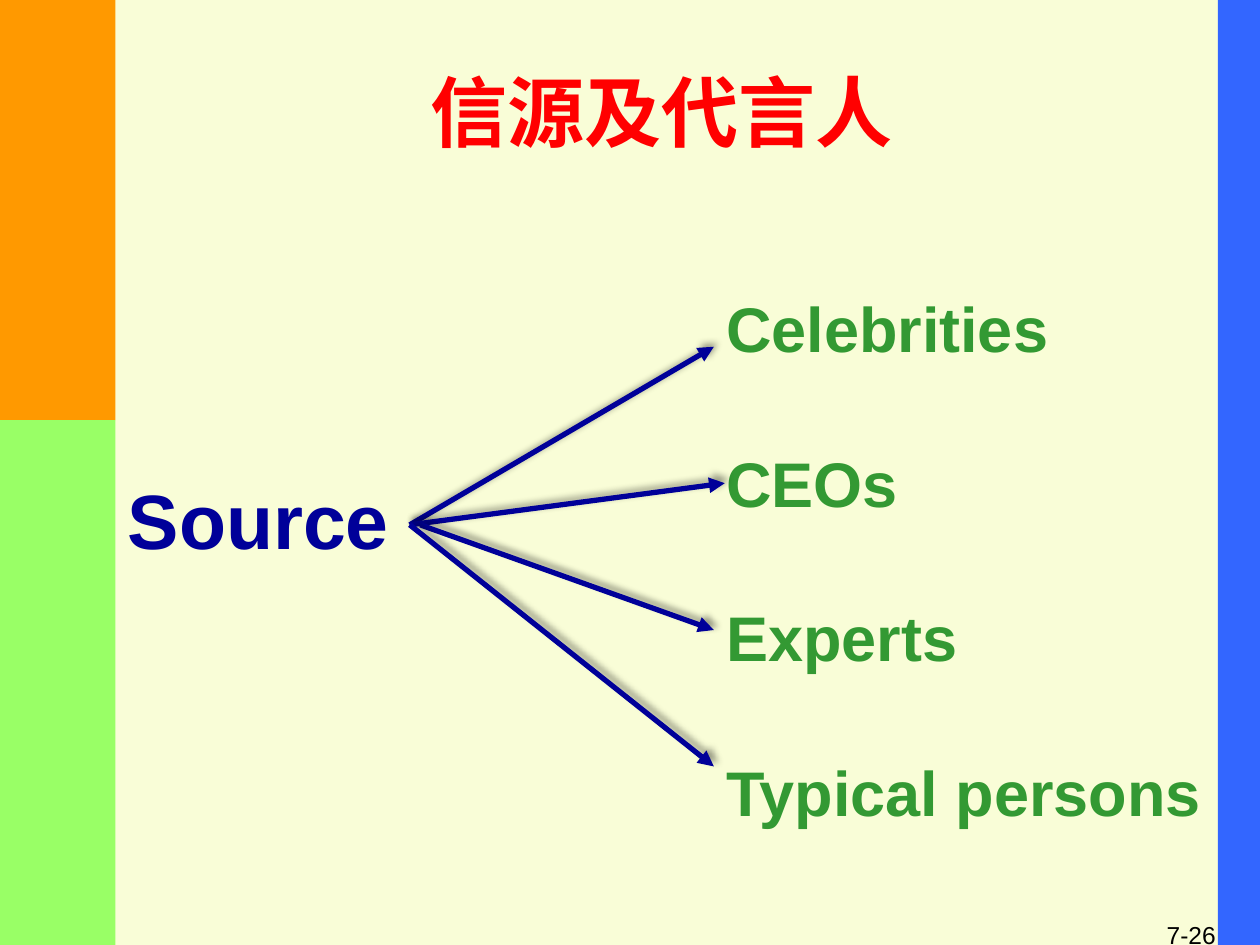
from lxml import etree
from pptx import Presentation
from pptx.dml.color import RGBColor
from pptx.enum import shapes, text
from pptx.oxml import ns, parse_xml
from pptx.util import Cm, Pt

NAVY = "000099"
SHADOW = f"""<a:effectLst {ns.nsdecls("a")}>
  <a:outerShdw blurRad="{Pt(4)}" dist="{Pt(3)}" dir="{315 * 60000}" algn="ctr" rotWithShape="0">
    <a:srgbClr val="000000"><a:alpha val="40000"/></a:srgbClr>
  </a:outerShdw>
</a:effectLst>"""


def colour(value):
    return RGBColor.from_string(value)


class SlideBuilder:
    def __init__(self, slide, font="Arial"):
        self.slide = slide
        self.font = font

    def background(self, fill):
        self.slide.background.fill.solid()
        self.slide.background.fill.fore_color.rgb = colour(fill)

    def band(self, left, top, width, height, fill):
        shape = self.slide.shapes.add_shape(
            shapes.MSO_SHAPE.RECTANGLE, Cm(left), Cm(top), Cm(width), Cm(height))
        shape.shadow.inherit = False
        shape.fill.solid()
        shape.fill.fore_color.rgb = colour(fill)
        shape.line.fill.background()

    def text(self, left, top, width, height, lines, size, ink, bold=True, wrap=False,
             align=text.PP_ALIGN.LEFT, anchor=text.MSO_ANCHOR.TOP, gap=0):
        """Add a text box with one paragraph per line, gap points apart."""
        box = self.slide.shapes.add_textbox(Cm(left), Cm(top), Cm(width), Cm(height))
        frame = box.text_frame
        frame.word_wrap = wrap
        frame.vertical_anchor = anchor
        frame.text = "\n".join(lines)
        for index, paragraph in enumerate(frame.paragraphs):
            paragraph.alignment = align
            paragraph.space_before = Pt(gap if index else 0)
            paragraph.font.name = self.font
            paragraph.font.size = Pt(size)
            paragraph.font.bold = bold
            paragraph.font.color.rgb = colour(ink)

    def arrow(self, start, end, ink, weight=3):
        """Add a shadowed straight arrow between two (x, y) points."""
        connector = self.slide.shapes.add_connector(
            shapes.MSO_CONNECTOR.STRAIGHT, *map(Cm, start + end))
        connector.line.color.rgb = colour(ink)
        connector.line.width = Pt(weight)
        line = connector.line._get_or_add_ln()
        etree.SubElement(line, ns.qn("a:tailEnd"), type="triangle")
        connector._element.spPr.append(parse_xml(SHADOW))


def main():
    presentation = Presentation()
    presentation.slide_width, presentation.slide_height = Cm(25.4), Cm(19.05)
    builder = SlideBuilder(presentation.slides.add_slide(presentation.slide_layouts[6]))
    middle = text.MSO_ANCHOR.MIDDLE

    builder.background("F9FDD7")
    builder.text(19.48, 18.21, 5.28, 1.27, ["7-26"], 14, "000000", bold=False,
                 wrap=True, align=text.PP_ALIGN.RIGHT, anchor=middle)
    builder.text(2.12, 0.64, 22.43, 3.18, ["信源及代言人"], 44, "FF0000",
                 wrap=True, align=text.PP_ALIGN.CENTER, anchor=middle)

    builder.band(24.55, 0, 0.85, 19.05, "3366FF")
    builder.band(0, 0, 2.33, 8.47, "FF9900")
    builder.band(0, 8.47, 2.33, 10.58, "99FF66")

    builder.text(2.33, 9.4, 5.77, 2.12, ["Source"], 44, NAVY)
    builder.text(14.39, 5.72, 10.19, 10.95,
                 ["Celebrities", "CEOs", "Experts", "Typical persons"],
                 36, "339933", gap=45)

    source_y = 10.58
    for start_x, end in [(8.26, (14.39, 6.99)), (8.26, (14.61, 9.74)),
                         (8.47, (14.39, 12.7)), (8.26, (14.39, 15.45))]:
        builder.arrow((start_x, source_y), end, NAVY)

    presentation.save("out.pptx")


if __name__ == "__main__":
    main()
